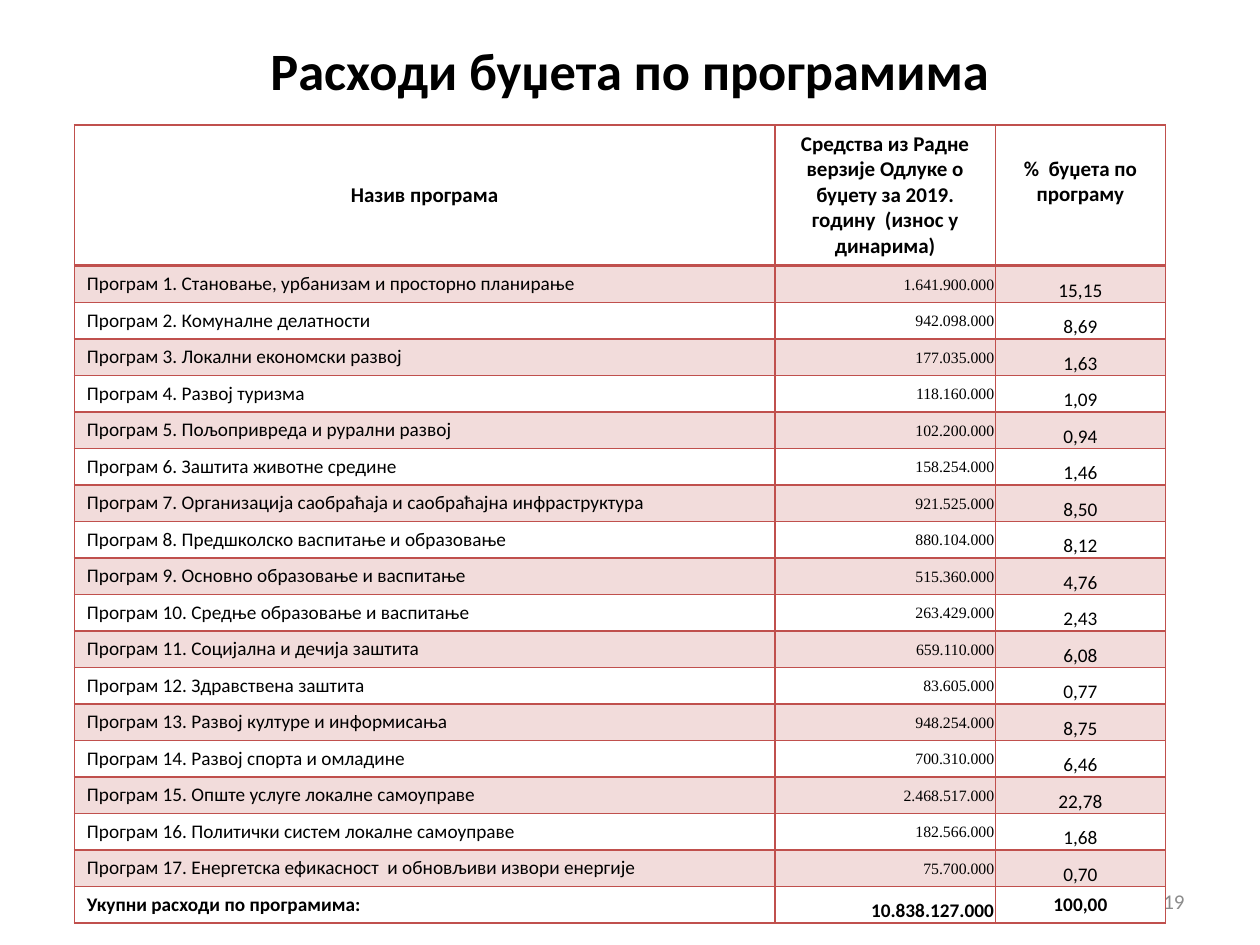
from dataclasses import dataclass

from lxml.etree import SubElement
from pptx import Presentation
from pptx.dml.color import RGBColor
from pptx.enum.text import MSO_ANCHOR, PP_ALIGN
from pptx.oxml.ns import qn
from pptx.util import Inches, Pt


@dataclass(frozen=True)
class Theme:
    font: str = "Calibri"
    amount_font: str = "Times New Roman"
    text: str = "000000"
    muted: str = "8C8C8C"
    border: str = "C0504D"
    band: str = "F2DCDB"
    title: int = 30
    head: int = 12
    number: int = 12
    body: int = 11
    amount: int = 9


THEME = Theme()
COL_WIDTHS = [5.56, 1.75, 1.35]
HEAD_HEIGHT, ROW_HEIGHT = 1.12, 0.29
TIGHT = (0.01, 0.01, 0.01, 0)
NORMAL = (0.1, 0.05, 0.1, 0.05)
LOWERED = (0.1, 0.25, 0.1, 0.05)

HEADERS = [
    "Назив програма",
    "Средства из Радне верзије Одлуке о буџету за 2019. годину  (износ у динарима)",
    "%  буџета по програму",
]
PROGRAMS = [
    ("Становање, урбанизам и просторно планирање", "1.641.900.000", "15,15"),
    ("Комуналне делатности", "942.098.000", "8,69"),
    ("Локални економски развој", "177.035.000", "1,63"),
    ("Развој туризма", "118.160.000", "1,09"),
    ("Пољопривреда и рурални развој", "102.200.000", "0,94"),
    ("Заштита животне средине", "158.254.000", "1,46"),
    ("Организација саобраћаја и саобраћајна инфраструктура", "921.525.000", "8,50"),
    ("Предшколско васпитање и образовање", "880.104.000", "8,12"),
    ("Основно образовање и васпитање", "515.360.000", "4,76"),
    ("Средње образовање и васпитање", "263.429.000", "2,43"),
    ("Социјална и дечија заштита", "659.110.000", "6,08"),
    ("Здравствена заштита", "83.605.000", "0,77"),
    ("Развој културе и информисања", "948.254.000", "8,75"),
    ("Развој спорта и омладине", "700.310.000", "6,46"),
    ("Опште услуге локалне самоуправе", "2.468.517.000", "22,78"),
    ("Политички систем локалне самоуправе", "182.566.000", "1,68"),
    ("Енергетска ефикасност  и обновљиви извори енергије", "75.700.000", "0,70"),
]
TOTALS = ("Укупни расходи по програмима:", "10.838.127.000", "100,00")


def write(tf, text, size, align, font=THEME.font, color=THEME.text, bold=False):
    tf.text = text
    p = tf.paragraphs[0]
    p.alignment = align
    f = p.runs[0].font
    f.name, f.size, f.bold = font, Pt(size), bold
    f.color.rgb = RGBColor.from_string(color)


def place(sp, left, top, width, height):
    sp.left, sp.top = Inches(left), Inches(top)
    sp.width, sp.height = Inches(width), Inches(height)


def add_title(s, text):
    sp = s.shapes.title
    place(sp, 0.74, 0.13, 8.52, 0.85)
    write(sp.text_frame, text, THEME.title, PP_ALIGN.CENTER, bold=True)
    sp.text_frame.vertical_anchor = MSO_ANCHOR.MIDDLE


def add_slide_number(s, text):
    sp = s.shapes.add_textbox(Inches(7.17), Inches(6.95), Inches(2.33), Inches(0.4))
    tf = sp.text_frame
    tf.word_wrap = True
    tf.vertical_anchor = MSO_ANCHOR.MIDDLE
    write(tf, text, THEME.number, PP_ALIGN.RIGHT, color=THEME.muted)


def set_borders(cell, widths):
    pr = cell._tc.get_or_add_tcPr()
    for i, (side, width) in enumerate(widths.items()):
        ln = pr.makeelement(qn(f"a:ln{side}"), {"w": str(Pt(width))})
        fill = SubElement(ln, qn("a:solidFill"))
        SubElement(fill, qn("a:srgbClr"), val=THEME.border)
        pr.insert(i, ln)


def fill_cell(cell, text, size, align, anchor=MSO_ANCHOR.TOP, margins=NORMAL,
              band=False, top=1, bottom=1, **style):
    write(cell.text_frame, text, size, align, **style)
    cell.vertical_anchor = anchor
    (cell.margin_left, cell.margin_top,
     cell.margin_right, cell.margin_bottom) = map(Inches, margins)
    if band:
        cell.fill.solid()
        cell.fill.fore_color.rgb = RGBColor.from_string(THEME.band)
    else:
        cell.fill.background()
    set_borders(cell, {"L": 1, "R": 1, "T": top, "B": bottom})


def fill_header(cells):
    layouts = [(MSO_ANCHOR.MIDDLE, NORMAL), (MSO_ANCHOR.TOP, NORMAL),
               (MSO_ANCHOR.TOP, LOWERED)]
    for cell, text, (anchor, margins) in zip(cells, HEADERS, layouts):
        fill_cell(cell, text, THEME.head, PP_ALIGN.CENTER, anchor, margins,
                  bottom=2, bold=True)


def fill_program(cells, number, program):
    name, amount, share = program
    edge = {"band": number % 2 == 1, "top": 2 if number == 1 else 1}
    fill_cell(cells[0], f"Програм {number}. {name}", THEME.body, PP_ALIGN.LEFT, **edge)
    fill_cell(cells[1], amount, THEME.amount, PP_ALIGN.RIGHT, MSO_ANCHOR.MIDDLE,
              TIGHT, font=THEME.amount_font, **edge)
    fill_cell(cells[2], share, THEME.body, PP_ALIGN.CENTER, MSO_ANCHOR.BOTTOM,
              TIGHT, **edge)


def fill_totals(cells):
    label, amount, share = TOTALS
    fill_cell(cells[0], label, THEME.body, PP_ALIGN.LEFT, bold=True)
    fill_cell(cells[1], amount, THEME.body, PP_ALIGN.RIGHT, MSO_ANCHOR.BOTTOM,
              TIGHT, bold=True)
    fill_cell(cells[2], share, THEME.body, PP_ALIGN.CENTER, bold=True)


def add_budget_table(s):
    n = len(PROGRAMS) + 2
    height = HEAD_HEIGHT + (n - 1) * ROW_HEIGHT
    tbl = s.shapes.add_table(n, len(COL_WIDTHS), Inches(0.59), Inches(0.99),
                             Inches(sum(COL_WIDTHS)), Inches(height)).table
    tbl.first_row = tbl.horz_banding = False
    for col, width in zip(tbl.columns, COL_WIDTHS):
        col.width = Inches(width)
    for i, row in enumerate(tbl.rows):
        row.height = Inches(ROW_HEIGHT if i else HEAD_HEIGHT)
    rows = [list(row.cells) for row in tbl.rows]
    fill_header(rows[0])
    for number, program in enumerate(PROGRAMS, 1):
        fill_program(rows[number], number, program)
    fill_totals(rows[-1])


def main():
    prs = Presentation()
    prs.slide_width, prs.slide_height = Inches(10), Inches(7.5)
    s = prs.slides.add_slide(prs.slide_layouts[5])
    add_title(s, "Расходи буџета по програмима")
    add_slide_number(s, "19")
    add_budget_table(s)
    prs.save("out.pptx")


if __name__ == "__main__":
    main()
